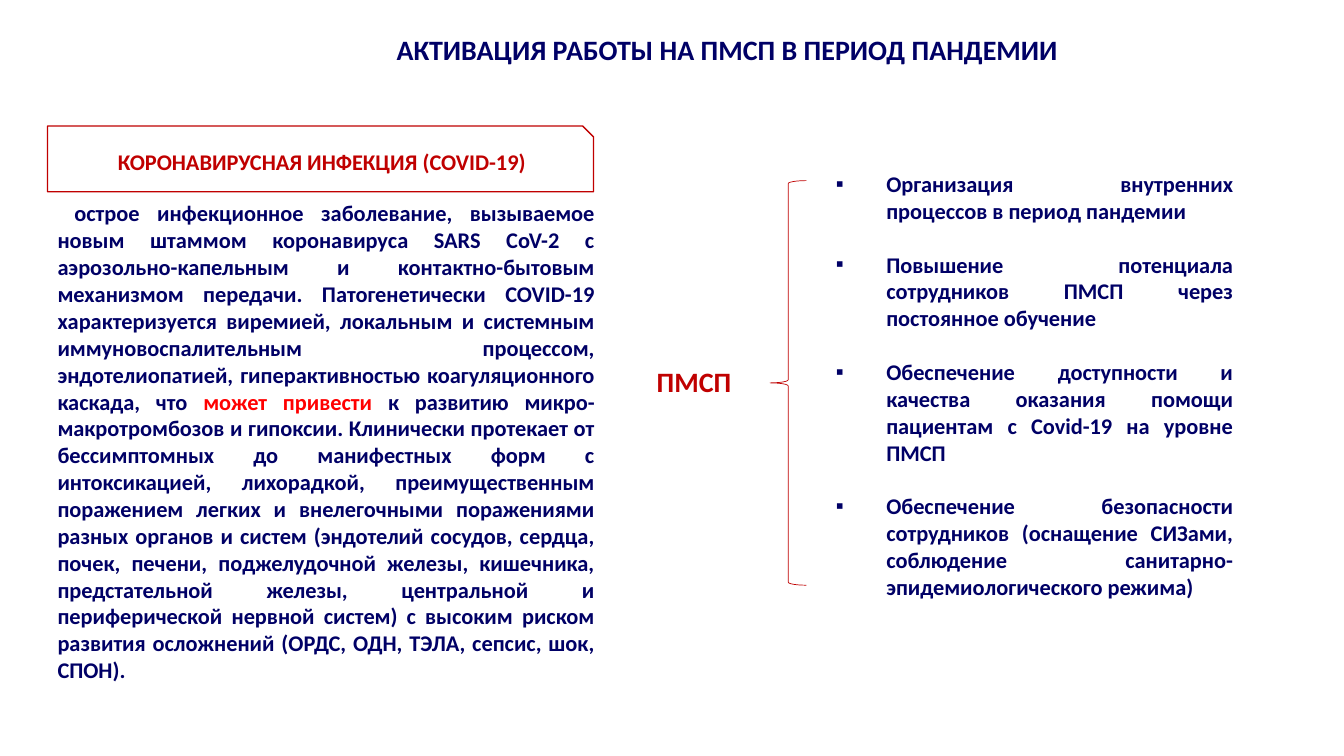
from pptx import Presentation
from pptx.dml.color import RGBColor
from pptx.enum.shapes import MSO_SHAPE
from pptx.enum.text import MSO_ANCHOR, PP_ALIGN
from pptx.oxml.ns import qn
from pptx.util import Pt
from lxml.etree import SubElement

NAVY, DARK, RED, WHITE = "000066", "C00000", "FF0000", "FFFFFF"
TASKS = [
    "Организация внутренних процессов в период пандемии",
    "Повышение потенциала сотрудников ПМСП через постоянное обучение",
    "Обеспечение доступности и качества оказания помощи "
    "пациентам с Covid-19 на уровне ПМСП",
    "Обеспечение безопасности сотрудников (оснащение СИЗами, "
    "соблюдение санитарно-эпидемиологического режима)",
]
ABOUT = [
    ("острое инфекционное заболевание, вызываемое новым штаммом коронавируса "
     "SARS CoV-2 с аэрозольно-капельным и контактно-бытовым механизмом передачи. "
     "Патогенетически COVID-19 характеризуется виремией, локальным и системным "
     "иммуновоспалительным процессом, эндотелиопатией, гиперактивностью "
     "коагуляционного каскада, что ", NAVY),
    ("может привести ", RED),
    ("к развитию микро-макротромбозов и гипоксии. Клинически протекает от "
     "бессимптомных до манифестных форм с интоксикацией, лихорадкой, "
     "преимущественным поражением легких и внелегочными поражениями разных "
     "органов и систем (эндотелий сосудов, сердца, почек, печени, поджелудочной "
     "железы, кишечника, предстательной железы, центральной и периферической "
     "нервной систем) с высоким риском развития осложнений (ОРДС, ОДН, ТЭЛА, "
     "сепсис, шок, СПОН).", NAVY),
]


def color(code):
    """Turn a hex string into a colour."""
    return RGBColor.from_string(code)


def style(item, values):
    """Set each named value on an item."""
    for name, value in values.items():
        setattr(item, name, value)


def shape(slide, kind, box, fill=None, line=None, width=1):
    """Draw a preset shape in a box."""
    form = slide.shapes.add_shape(kind, *map(Pt, box))
    form.shadow.inherit = False
    if fill:
        form.fill.solid()
        form.fill.fore_color.rgb = color(fill)
    else:
        form.fill.background()
    if line:
        form.line.color.rgb = color(line)
        form.line.width = Pt(width)
    else:
        form.line.fill.background()
    return form


def label(slide, box):
    """Add a wrapping text box and return its frame."""
    frame = slide.shapes.add_textbox(*map(Pt, box)).text_frame
    frame.word_wrap = True
    return frame


def write(para, runs, size, align):
    """Fill a paragraph with bold coloured runs."""
    para.alignment = align
    for text, code in runs:
        run = para.add_run()
        run.text = text
        style(run.font, {"name": "Calibri", "size": Pt(size), "bold": True})
        run.font.color.rgb = color(code)


def title(slide, box):
    """Place the slide heading."""
    text = "АКТИВАЦИЯ РАБОТЫ НА ПМСП В ПЕРИОД ПАНДЕМИИ"
    write(label(slide, box).paragraphs[0], [(text, NAVY)], 20, PP_ALIGN.CENTER)


def disease(slide, box):
    """Place the disease description under its snipped header."""
    left, top, width, height = box
    body = shape(slide, MSO_SHAPE.RECTANGLE,
                 (left, top + 49, width, height - 49), WHITE).text_frame
    style(body, {"word_wrap": True, "vertical_anchor": MSO_ANCHOR.TOP})
    para = body.paragraphs[0]
    write(para, ABOUT, 16, PP_ALIGN.JUSTIFY)
    para._p.get_or_add_pPr().set("indent", str(Pt(12)))
    head = shape(slide, MSO_SHAPE.SNIP_1_RECTANGLE,
                 (left, top, width - 8, 47), WHITE, DARK).text_frame
    style(head, {"word_wrap": True, "vertical_anchor": MSO_ANCHOR.MIDDLE,
                 "margin_left": Pt(13)})
    write(head.paragraphs[0], [("КОРОНАВИРУСНАЯ ИНФЕКЦИЯ (COVID-19)", DARK)],
          16, PP_ALIGN.CENTER)


def care(slide, box):
    """Place the care label, its brace and the bulleted tasks."""
    left, top, width, height = box
    write(label(slide, (left, top + 139, 83, 32)).paragraphs[0],
          [("ПМСП", DARK)], 20, PP_ALIGN.LEFT)
    shape(slide, MSO_SHAPE.LEFT_BRACE,
          (left + 88, top + 11, 26, height - 29), None, DARK, 0.5)
    frame = label(slide, (left + 128, top, width - 128, height))
    for index, task in enumerate(TASKS):
        para = frame.add_paragraph() if index else frame.paragraphs[0]
        write(para, [(task, NAVY)], 16, PP_ALIGN.JUSTIFY)
        para.space_before = Pt(19.2 if index else 0)
        props = para._p.get_or_add_pPr()
        props.set("marL", str(Pt(36)))
        props.set("indent", str(Pt(-36)))
        SubElement(props, qn("a:buFont")).set("typeface", "Arial")
        SubElement(props, qn("a:buChar")).set("char", "▪")


def main():
    """Build and save the slide."""
    deck = Presentation()
    style(deck, {"slide_width": Pt(960), "slide_height": Pt(540)})
    slide = deck.slides.add_slide(deck.slide_layouts[6])
    care(slide, (462, 118, 426, 318))
    disease(slide, (34, 90, 398, 405))
    title(slide, (184, 19.5, 671, 32))
    deck.save("out.pptx")


if __name__ == "__main__":
    main()
